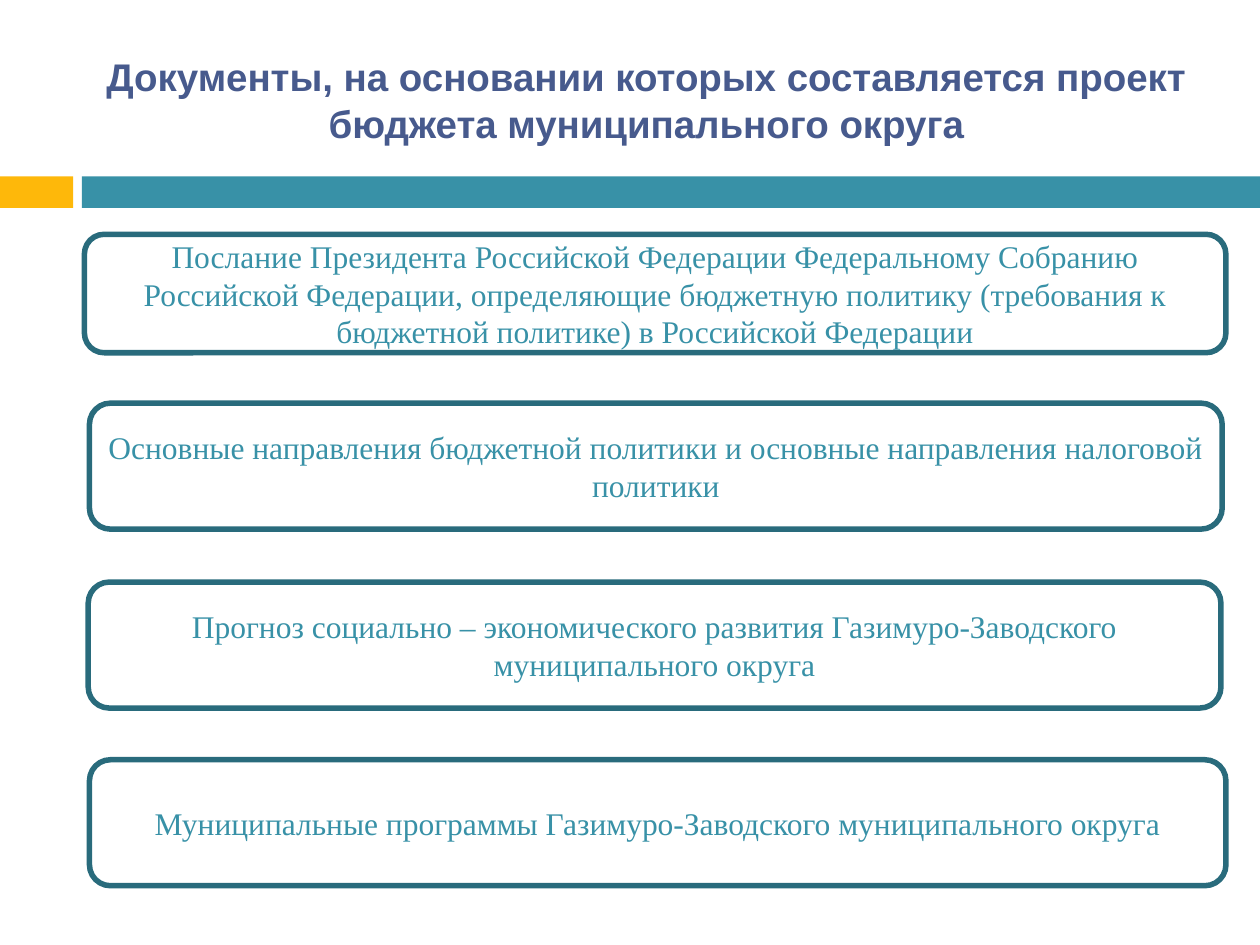
from pptx import Presentation
from pptx.dml.color import RGBColor as RGB
from pptx.enum.shapes import MSO_SHAPE as Shape
from pptx.enum.text import MSO_ANCHOR as Anchor, PP_ALIGN as Align
from pptx.util import Inches, Pt

GOLD = RGB(0xFE, 0xB8, 0x0A)
TEAL = RGB(0x38, 0x91, 0xA7)
DARK = RGB(0x29, 0x6B, 0x7C)
NAVY = RGB(0x47, 0x5A, 0x8D)
WHITE = RGB(0xFF, 0xFF, 0xFF)

TITLE = "Документы, на основании которых составляется проект бюджета муниципального округа"
CARDS = [
    ("Послание Президента Российской Федерации Федеральному Собранию Российской Федерации, "
     "определяющие бюджетную политику (требования к бюджетной политике) в Российской Федерации",
     (0.67, 1.86, 9.06, 0.94)),
    ("Основные направления бюджетной политики и основные направления налоговой политики",
     (0.71, 3.2, 8.99, 1)),
    ("Прогноз социально – экономического развития Газимуро-Заводского муниципального округа",
     (0.7, 4.62, 8.99, 1)),
    ("Муниципальные программы Газимуро-Заводского муниципального округа",
     (0.71, 6.03, 9.02, 1)),
]


def put_text(shape, text, font, size, color, bold=False):
    frame = shape.text_frame
    frame.word_wrap = True
    frame.vertical_anchor = Anchor.MIDDLE
    para = frame.paragraphs[0]
    para.alignment = Align.CENTER
    run = para.add_run()
    run.text = text
    run.font.name = font
    run.font.size = Pt(size)
    run.font.bold = bold
    run.font.color.rgb = color


def add_box(slide, kind, box, fill, line=None):
    shape = slide.shapes.add_shape(kind, *map(Inches, box))
    shape.shadow.inherit = False
    shape.fill.solid()
    shape.fill.fore_color.rgb = fill
    if line is None:
        shape.line.fill.background()
    else:
        shape.line.color.rgb = line
        shape.line.width = Pt(3.15)
    return shape


def add_title(slide, box):
    title = slide.shapes.title
    title.left, title.top, title.width, title.height = map(Inches, box)
    put_text(title, TITLE, "Arial", 22, NAVY, bold=True)


def add_band(slide, box, tab=0.58, gap=0.07):
    left, top, width, height = box
    start = tab + gap
    add_box(slide, Shape.RECTANGLE, (left, top, tab, height), GOLD)
    add_box(slide, Shape.RECTANGLE, (left + start, top, width - start, height), TEAL)


def add_card(slide, text, box):
    card = add_box(slide, Shape.ROUNDED_RECTANGLE, box, WHITE, DARK)
    put_text(card, text, "Times New Roman", 18, TEAL)


def main():
    deck = Presentation()
    deck.slide_width, deck.slide_height = Inches(10), Inches(7.5)
    slide = deck.slides.add_slide(deck.slide_layouts[5])
    add_band(slide, (0, 1.4, 10, 0.25))
    add_title(slide, (0.67, 0.25, 8.92, 1.08))
    for text, box in CARDS:
        add_card(slide, text, box)
    deck.save("out.pptx")


if __name__ == "__main__":
    main()
